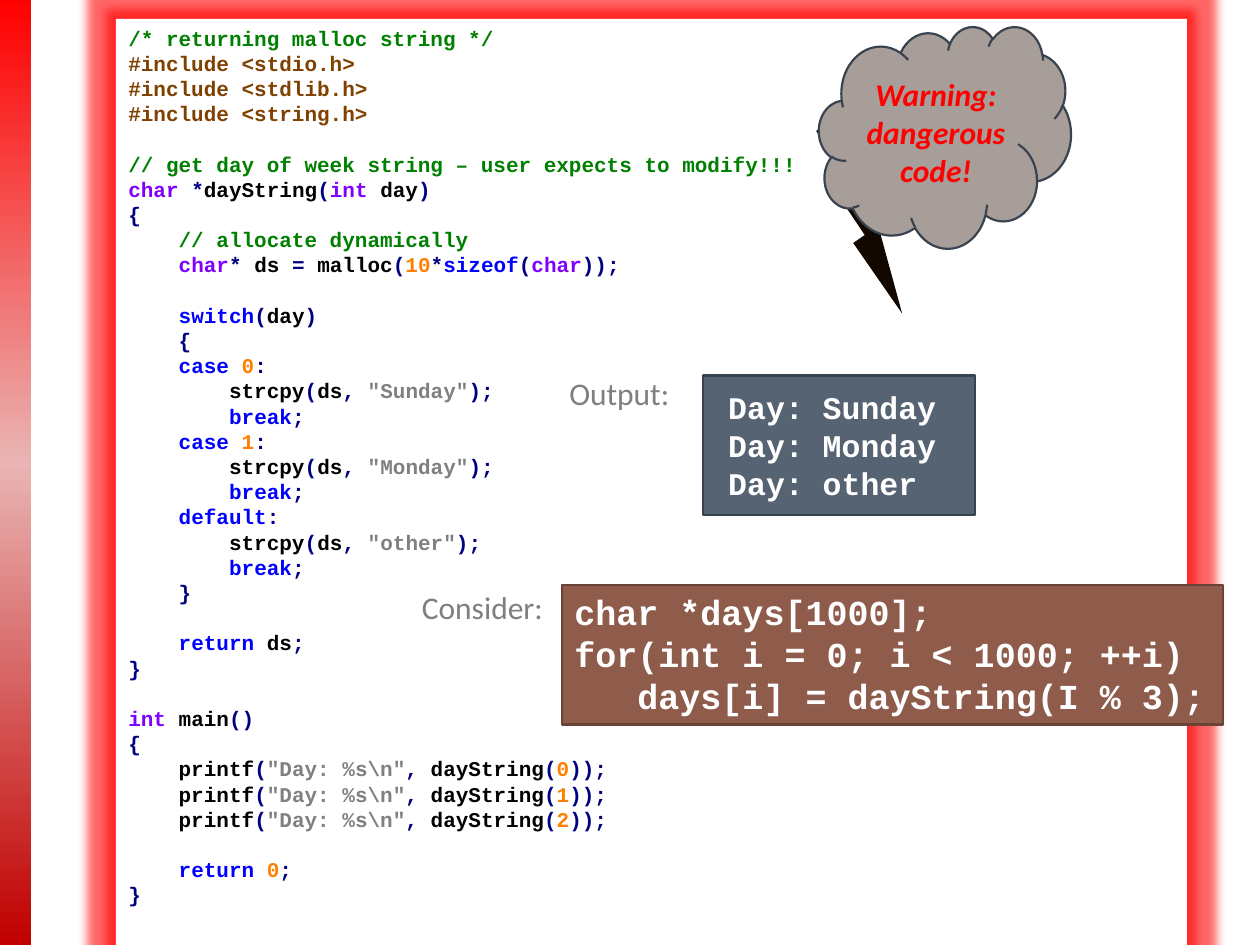
from itertools import groupby

from lxml.etree import SubElement
from pptx import Presentation
from pptx.dml.color import RGBColor
from pptx.enum.shapes import MSO_SHAPE
from pptx.enum.text import MSO_ANCHOR, PP_ALIGN
from pptx.oxml import parse_xml
from pptx.oxml.ns import nsdecls, qn
from pptx.util import Inches, Pt

COLORS = {
    "white": "FFFFFF", "red": "FF0000", "pink": "E9B4B3", "crimson": "C00000",
    "comment": "008000", "directive": "804000", "type": "8000FF",
    "keyword": "0000FF", "number": "FF8000", "string": "808080",
    "symbol": "000080", "plain": "000000", "label": "7F7F7F",
    "bolt": "120800", "cloud": "A79D99", "slate": "4D5B6B",
    "slate line": "39434F", "brown": "8F5B4B", "brown line": "6A4337",
}
TYPES = {"char", "int"}
KEYWORDS = {"sizeof", "switch", "case", "break", "default", "return"}
CODE = r'''/* returning malloc string */
#include <stdio.h>
#include <stdlib.h>
#include <string.h>

// get day of week string – user expects to modify!!!
char *dayString(int day)
{
    // allocate dynamically
    char* ds = malloc(10*sizeof(char));

    switch(day)
    {
    case 0:
        strcpy(ds, "Sunday");
        break;
    case 1:
        strcpy(ds, "Monday");
        break;
    default:
        strcpy(ds, "other");
        break;
    }

    return ds;
}

int main()
{
    printf("Day: %s\n", dayString(0));
    printf("Day: %s\n", dayString(1));
    printf("Day: %s\n", dayString(2));

    return 0;
}'''


def token_color(token):
    """Name the colour of one piece of code."""
    if token in TYPES:
        return "type"
    if token in KEYWORDS:
        return "keyword"
    if token.isdigit():
        return "number"
    return "plain" if token.isspace() or token.isalnum() else "symbol"


def highlight(line):
    """Split a line of code into (text, colour) runs."""
    if line.startswith("#"):
        return [(line, "directive")]
    if line.lstrip().startswith(("//", "/*")):
        return [(line, "comment")]
    tokens = []
    for index, part in enumerate(line.split('"')):
        if index % 2:
            tokens.append((f'"{part}"', "string"))
        else:
            for _, group in groupby(part, lambda c: (c.isalnum(), c.isspace())):
                token = "".join(group)
                tokens.append((token, token_color(token)))
    return [("".join(text for text, _ in group), color)
            for color, group in groupby(tokens, lambda token: token[1])]


class SlideBuilder:
    """Hold the style and the current slide."""

    mono = "Courier New"
    sans = "Calibri"
    mono_spacing = 1.2

    def __init__(self, presentation):
        self.slide = presentation.slides.add_slide(presentation.slide_layouts[6])

    def color(self, name):
        return RGBColor.from_string(COLORS[name])

    def shape(self, kind, box, fill, line=None):
        shape = self.slide.shapes.add_shape(kind, *map(Inches, box))
        shape.shadow.inherit = False
        shape.fill.solid()
        shape.fill.fore_color.rgb = self.color(fill)
        if line:
            shape.line.color.rgb = self.color(line)
            shape.line.width = Pt(1.25)
        else:
            shape.line.fill.background()
        return shape

    def gradient(self, shape, stops):
        properties = shape._element.spPr
        stop_xml = "".join(
            f'<a:gs pos="{position * 1000}"><a:srgbClr val="{COLORS[name]}"/></a:gs>'
            for position, name in stops)
        properties.replace(properties.find(qn("a:solidFill")), parse_xml(
            f'<a:gradFill {nsdecls("a")} rotWithShape="1"><a:gsLst>{stop_xml}</a:gsLst>'
            '<a:lin ang="5400000" scaled="0"/></a:gradFill>'))

    def glow(self, shape, name, radius, opacity):
        effects = shape._element.spPr.find(qn("a:effectLst"))
        glow = SubElement(effects, qn("a:glow"), rad=str(Pt(radius)))
        color = SubElement(glow, qn("a:srgbClr"), val=COLORS[name])
        SubElement(color, qn("a:alpha"), val=str(opacity * 1000))

    def opacity(self, shape, percent):
        color = shape._element.spPr.find(qn("a:solidFill"))[0]
        SubElement(color, qn("a:alpha"), val=str(percent * 1000))

    def run(self, paragraph, text, font, size, color, bold=False, italic=False):
        run = paragraph.add_run()
        run.text = text
        run.font.name = font
        run.font.size = Pt(size)
        run.font.bold = bold
        run.font.italic = italic
        run.font.color.rgb = self.color(color)

    def code(self, shape, lines, size, wrap=False):
        frame = shape.text_frame
        frame.word_wrap = wrap
        frame.vertical_anchor = MSO_ANCHOR.TOP
        pitch = Pt(size * self.mono_spacing)
        paragraph, gap = frame.paragraphs[0], 0
        for index, runs in enumerate(lines):
            if not runs:
                gap += pitch
                continue
            if index:
                paragraph = frame.add_paragraph()
            paragraph.alignment = PP_ALIGN.LEFT
            paragraph.line_spacing = pitch
            paragraph.space_before = gap
            gap = 0
            for text, color in runs:
                self.run(paragraph, text, self.mono, size, color, bold=True)

    def label(self, text, box):
        frame = self.slide.shapes.add_textbox(*map(Inches, box)).text_frame
        frame.word_wrap = False
        self.run(frame.paragraphs[0], text, self.sans, 18, "label")

    def warning(self, shape, lines):
        frame = shape.text_frame
        frame.word_wrap = True
        frame.vertical_anchor = MSO_ANCHOR.MIDDLE
        for index, text in enumerate(lines):
            paragraph = frame.add_paragraph() if index else frame.paragraphs[0]
            paragraph.alignment = PP_ALIGN.CENTER
            for part_index, part in enumerate(text.split("\n")):
                if part_index:
                    paragraph.add_line_break()
                self.run(paragraph, part, self.sans, 18, "red", True, True)


def main():
    presentation = Presentation()
    presentation.slide_width, presentation.slide_height = Inches(10), Inches(7.5)
    builder = SlideBuilder(presentation)

    side_bar = builder.shape(MSO_SHAPE.RECTANGLE, (0, 0, 0.25, 7.5), "red")
    builder.gradient(side_bar, [(0, "red"), (49, "pink"), (100, "crimson")])

    listing = builder.shape(MSO_SHAPE.RECTANGLE, (0.92, 0.15, 8.5, 7.37), "white")
    builder.glow(listing, "red", 11, 60)
    builder.code(listing, [highlight(line) if line else [] for line in CODE.split("\n")],
                 12, wrap=True)

    bolt = builder.shape(MSO_SHAPE.LIGHTNING_BOLT, (6.42, 0.78, 0.83, 1.67), "bolt", "bolt")
    bolt.rotation = 6
    bolt.line.fill.background()
    cloud = builder.shape(MSO_SHAPE.CLOUD, (6.5, 0.21, 2, 1.76), "cloud", "slate line")
    builder.warning(cloud, ["Warning:", "dangerous\ncode!"])

    output = builder.shape(MSO_SHAPE.RECTANGLE, (5.58, 2.98, 2.16, 1.11), "slate", "slate line")
    builder.opacity(output, 95)
    output.text_frame.margin_left = Inches(0.2)
    output.text_frame.margin_top = output.text_frame.margin_bottom = Inches(0.1)
    output.text_frame.margin_right = Inches(0.3)
    builder.code(output, [[(f"Day: {day}", "white")] for day in ("Sunday", "Monday", "other")], 18)
    builder.label("Output:", (4.42, 2.92, 1, 0.4))

    example = builder.shape(MSO_SHAPE.RECTANGLE, (4.46, 4.64, 5.25, 1.11), "brown", "brown line")
    loop = ("char *days[1000];", "for(int i = 0; i < 1000; ++i)", "   days[i] = dayString(I % 3);")
    builder.code(example, [[(line, "white")] for line in loop], 20)
    builder.label("Consider:", (3.25, 4.62, 1.17, 0.4))

    presentation.save("out.pptx")


if __name__ == "__main__":
    main()
